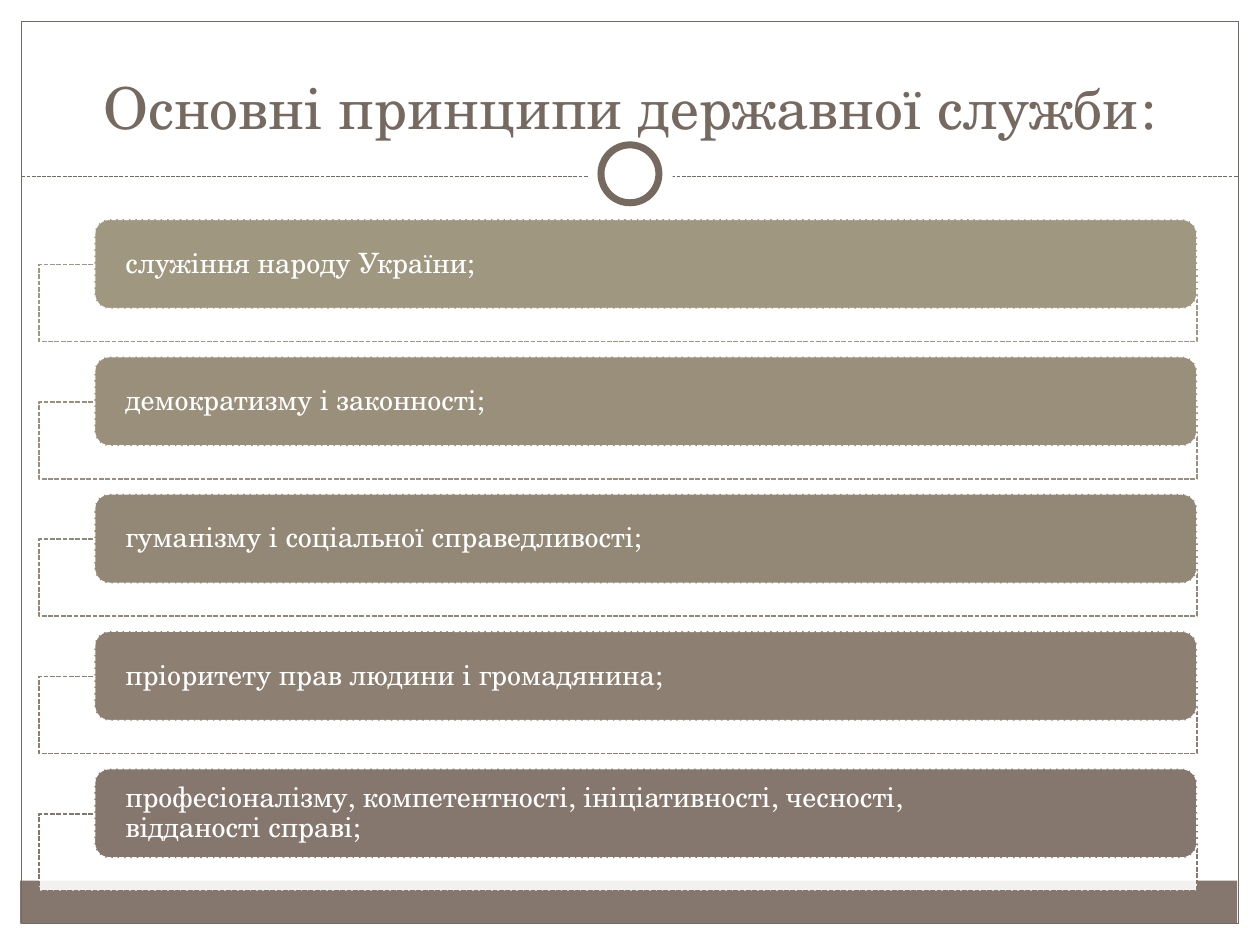
from lxml.etree import SubElement
from pptx import Presentation
from pptx.dml.color import RGBColor
from pptx.enum.dml import MSO_LINE
from pptx.enum.shapes import MSO_CONNECTOR, MSO_SHAPE as Shape
from pptx.enum.text import MSO_ANCHOR, PP_ALIGN
from pptx.oxml.ns import qn
from pptx.util import Inches, Pt

COLORS = {"white": "FFFFFF", "brown": "756960", "footer": "85776D"}
FONT = "TeX Gyre Schola"
PRINCIPLES = [
    ("служіння народу України;", "A09781"),
    ("демократизму і законності;", "9A8F7B"),
    ("гуманізму і соціальної справедливості;", "938776"),
    ("пріоритету прав людини і громадянина;", "8D7F71"),
    ("професіоналізму, компетентності, ініціативності, чесності, \nвідданості справі;", "85776D"),
]
ROW_STEP = 1.09


def add_box(kind, box, fill=None, line=None, width=0.75, dash=None):
    shape = slide.shapes.add_shape(kind, *[Inches(v) for v in box])
    shape.shadow.inherit = False
    if fill:
        shape.fill.solid()
        shape.fill.fore_color.rgb = RGBColor.from_string(fill)
    else:
        shape.fill.background()
    if line:
        shape.line.color.rgb = RGBColor.from_string(line)
        shape.line.width = Pt(width)
        shape.line.dash_style = dash
    else:
        shape.line.fill.background()
    return shape


def write(shape, text, size, color, align, anchor):
    frame = shape.text_frame
    frame.word_wrap = True
    frame.vertical_anchor = anchor
    paragraph = frame.paragraphs[0]
    paragraph.text = text.replace("\n", "\v")
    paragraph.alignment = align
    for run in paragraph.runs:
        run.font.size = Pt(size)
        run.font.name = FONT
        run.font.color.rgb = RGBColor.from_string(color)
    return paragraph


prs = Presentation()
prs.slide_width, prs.slide_height = Inches(10), Inches(7.5)
slide = prs.slides.add_slide(prs.slide_layouts[6])

for margin in [(0, 0, 10, 1.52), (0, 0, 0.17, 7.5), (9.83, 0, 0.17, 7.5)]:
    add_box(Shape.RECTANGLE, margin, COLORS["white"])
add_box(Shape.RECTANGLE, (0.16, 6.99, 9.66, 0.34), COLORS["footer"])
add_box(Shape.RECTANGLE, (0.17, 0.17, 9.66, 7.16), line=COLORS["brown"])

divider = slide.shapes.add_connector(
    MSO_CONNECTOR.STRAIGHT, Inches(0.17), Inches(1.4), Inches(9.83), Inches(1.4))
divider.line.color.rgb = RGBColor.from_string(COLORS["brown"])
divider.line.width = Pt(0.75)
divider.line.dash_style = MSO_LINE.SQUARE_DOT
SubElement(divider._element.spPr, qn("a:effectLst"))

add_box(Shape.OVAL, (4.67, 1.05, 0.67, 0.67), COLORS["white"])
add_box(Shape.OVAL, (4.77, 1.15, 0.46, 0.46), COLORS["white"], COLORS["brown"], 4)

title = slide.shapes.add_textbox(Inches(0.5), Inches(0.17), Inches(9), Inches(1))
write(title, "Основні принципи державної служби:", 33, COLORS["brown"],
      PP_ALIGN.CENTER, MSO_ANCHOR.BOTTOM)

for row, (principle, color) in enumerate(PRINCIPLES):
    offset = row * ROW_STEP
    bracket = add_box(Shape.RECTANGLE, (0.31, 2.1 + offset, 9.19, 0.61),
                      COLORS["white"], color, 0.9, MSO_LINE.SQUARE_DOT)
    bracket_fill = bracket._element.spPr.find(qn("a:solidFill"))
    SubElement(bracket_fill[0], qn("a:alpha"), val="90000")

    bar = add_box(Shape.ROUNDED_RECTANGLE, (0.75, 1.74 + offset, 8.75, 0.71),
                  color, COLORS["white"], 0.9, MSO_LINE.SQUARE_DOT)
    label = write(bar, principle, 16, COLORS["white"], PP_ALIGN.LEFT, MSO_ANCHOR.MIDDLE)
    label.line_spacing = 0.9
    bar.text_frame.margin_left = bar.text_frame.margin_right = Inches(0.21)
    bar.text_frame.margin_top = bar.text_frame.margin_bottom = 0

prs.save("out.pptx")
